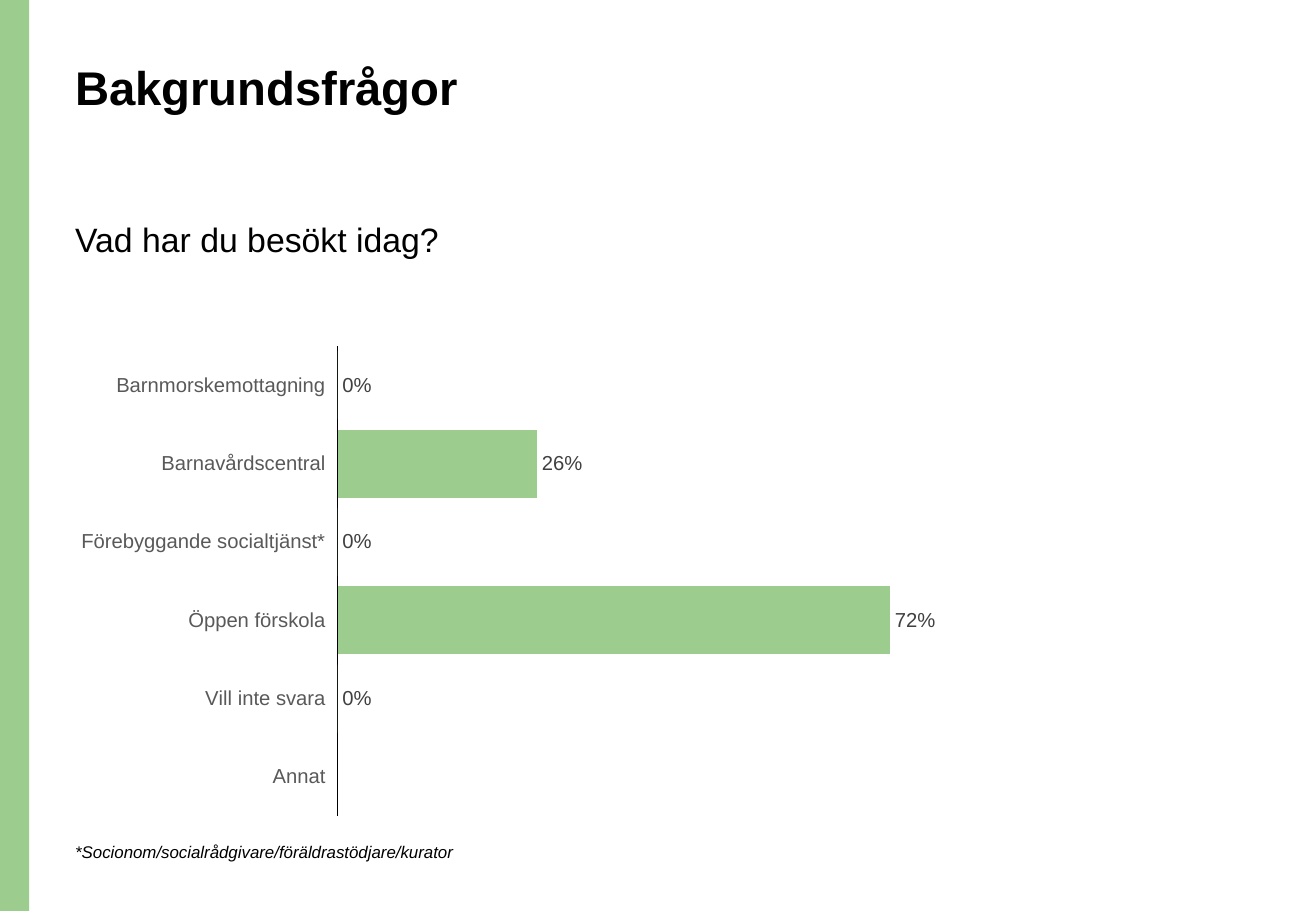
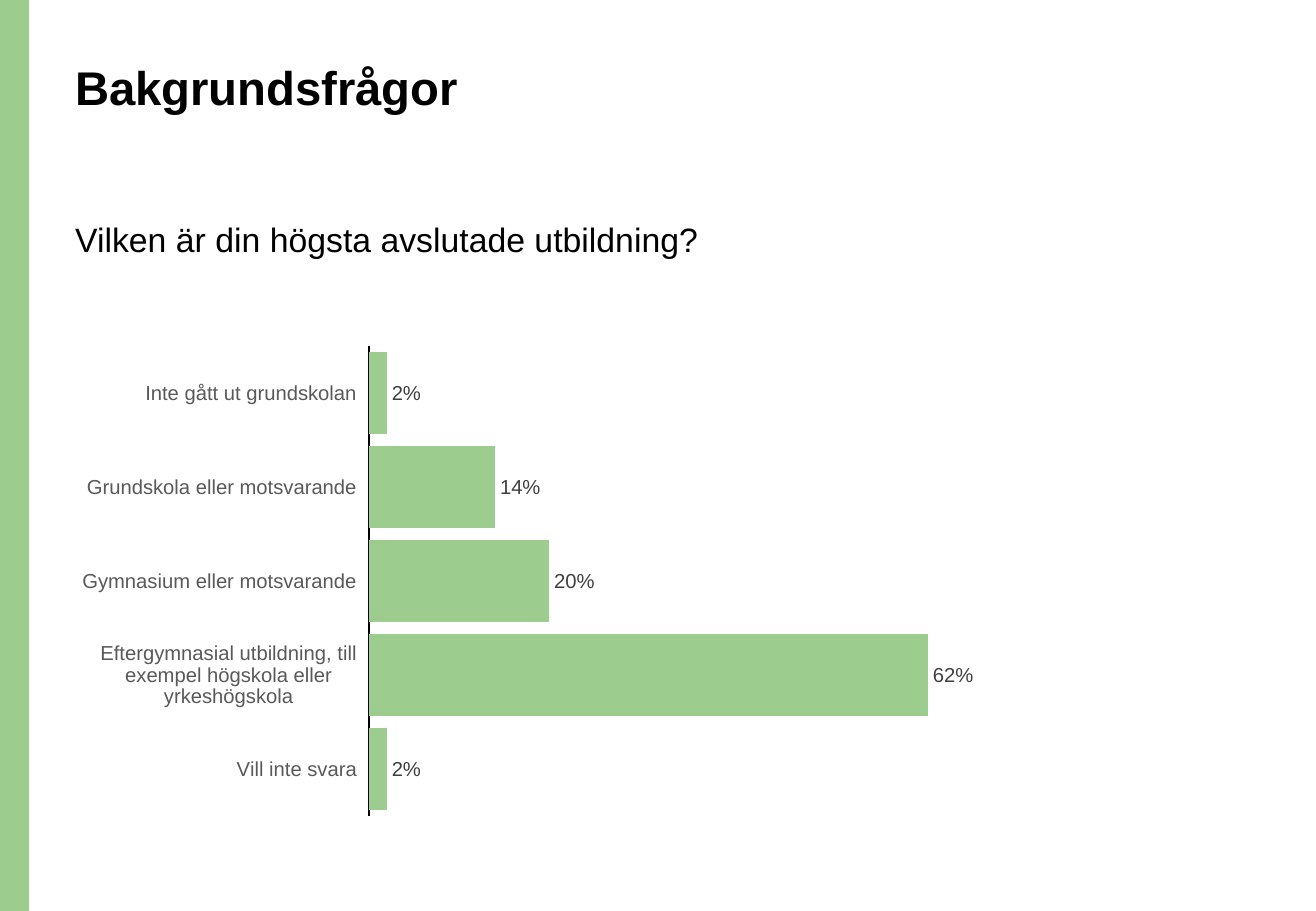
from dataclasses import dataclass

from pptx import Presentation
from pptx.chart.data import CategoryChartData
from pptx.dml.color import RGBColor
from pptx.enum.chart import XL_CHART_TYPE, XL_LABEL_POSITION, XL_TICK_LABEL_POSITION, XL_TICK_MARK
from pptx.enum.shapes import MSO_SHAPE
from pptx.enum.text import MSO_ANCHOR, PP_ALIGN
from pptx.slide import Slide
from pptx.util import Inches, Pt

BAR_CHART = XL_CHART_TYPE.BAR_CLUSTERED
OUTSIDE_END = XL_LABEL_POSITION.OUTSIDE_END
LABELS_LOW = XL_TICK_LABEL_POSITION.LOW
NO_TICK = XL_TICK_MARK.NONE
RECTANGLE = MSO_SHAPE.RECTANGLE
TOP = MSO_ANCHOR.TOP
LEFT = PP_ALIGN.LEFT

FONT = "Arial"
GREEN = "9DCC8F"
BLACK = "000000"
AXIS_GREY = "595959"
LABEL_GREY = "404040"
SLIDE_WIDTH, SLIDE_HEIGHT = 10.83, 7.5
BAND_WIDTH = 0.24
MARGIN = 0.52


@dataclass(frozen=True)
class TextStyle:
    size: float
    bold: bool = False
    italic: bool = False
    line_spacing: float = 1.0


@dataclass(frozen=True)
class Question:
    text: str
    answers: dict[str, float | None]
    chart_width: float
    axis_maximum: float
    footnote: str = ""


TITLE = TextStyle(28, bold=True, line_spacing=0.9)
SUBTITLE = TextStyle(20, line_spacing=0.9)
FOOTNOTE = TextStyle(10, italic=True)

QUESTIONS = [
    Question(
        "Vad har du besökt idag?",
        {
            "Barnmorskemottagning": 0,
            "Barnavårdscentral": 0.26,
            "Förebyggande socialtjänst*": 0,
            "Öppen förskola": 0.72,
            "Vill inte svara": 0,
            "Annat": None,
        },
        chart_width=7.46,
        axis_maximum=0.8,
        footnote="*Socionom/socialrådgivare/föräldrastödjare/kurator",
    ),
    Question(
        "Vilken är din högsta avslutade utbildning?",
        {
            "Inte gått ut grundskolan": 0.02,
            "Grundskola eller motsvarande": 0.14,
            "Gymnasium eller motsvarande": 0.2,
            "Eftergymnasial utbildning, till exempel högskola eller yrkeshögskola": 0.62,
            "Vill inte svara": 0.02,
        },
        chart_width=7.87,
        axis_maximum=0.7,
    ),
]


def rgb(color: str) -> RGBColor:
    return RGBColor.from_string(color)


def style_font(font, size: float, color: str) -> None:
    font.name = FONT
    font.size = Pt(size)
    font.color.rgb = rgb(color)


def add_band(slide: Slide) -> None:
    band = slide.shapes.add_shape(RECTANGLE, 0, 0, Inches(BAND_WIDTH), Inches(SLIDE_HEIGHT))
    band.shadow.inherit = False
    band.fill.solid()
    band.fill.fore_color.rgb = rgb(GREEN)
    band.line.fill.background()


def add_text(slide: Slide, text: str, top: float, width: float, height: float, style: TextStyle) -> None:
    box = slide.shapes.add_textbox(Inches(MARGIN), Inches(top), Inches(width), Inches(height))
    frame = box.text_frame
    frame.word_wrap = True
    frame.vertical_anchor = TOP
    frame.text = text
    paragraph = frame.paragraphs[0]
    paragraph.alignment = LEFT
    paragraph.line_spacing = style.line_spacing
    font = paragraph.runs[0].font
    style_font(font, style.size, BLACK)
    font.bold = style.bold
    font.italic = style.italic


def add_answer_chart(slide: Slide, question: Question) -> None:
    data = CategoryChartData(number_format="0%")
    data.categories = list(question.answers)
    data.add_series("Series 1", list(question.answers.values()))
    chart = slide.shapes.add_chart(
        BAR_CHART, Inches(MARGIN), Inches(2.77), Inches(question.chart_width), Inches(4.03), data
    ).chart
    chart.has_title = False
    chart.has_legend = False
    style_font(chart.font, 10, BLACK)

    answer_axis = chart.category_axis
    answer_axis.reverse_order = True
    answer_axis.has_major_gridlines = False
    answer_axis.major_tick_mark = NO_TICK
    answer_axis.minor_tick_mark = NO_TICK
    answer_axis.tick_label_position = LABELS_LOW
    answer_axis.format.line.color.rgb = rgb(BLACK)
    answer_axis.format.line.width = Pt(0.75)
    style_font(answer_axis.tick_labels.font, 12, AXIS_GREY)

    share_axis = chart.value_axis
    share_axis.visible = False
    share_axis.has_major_gridlines = False
    share_axis.minimum_scale = 0
    share_axis.maximum_scale = question.axis_maximum

    plot = chart.plots[0]
    plot.vary_by_categories = False
    plot.gap_width = 15
    bars = plot.series[0]
    bars.invert_if_negative = False
    bars.format.fill.solid()
    bars.format.fill.fore_color.rgb = rgb(GREEN)
    labels = bars.data_labels
    labels.show_value = True
    labels.number_format = "0%"
    labels.number_format_is_linked = False
    labels.position = OUTSIDE_END
    style_font(labels.font, 12, LABEL_GREY)


def add_question_slide(presentation, question: Question) -> None:
    slide = presentation.slides.add_slide(presentation.slide_layouts[6])
    add_band(slide)
    add_text(slide, "Bakgrundsfrågor", 0.48, 9.34, 1.02, TITLE)
    add_text(slide, question.text, 1.79, 6.5, 0.74, SUBTITLE)
    add_answer_chart(slide, question)
    if question.footnote:
        add_text(slide, question.footnote, 6.88, 5.42, 0.27, FOOTNOTE)


def main() -> None:
    presentation = Presentation()
    presentation.slide_width = Inches(SLIDE_WIDTH)
    presentation.slide_height = Inches(SLIDE_HEIGHT)
    for question in QUESTIONS:
        add_question_slide(presentation, question)
    presentation.save("out.pptx")


if __name__ == "__main__":
    main()
